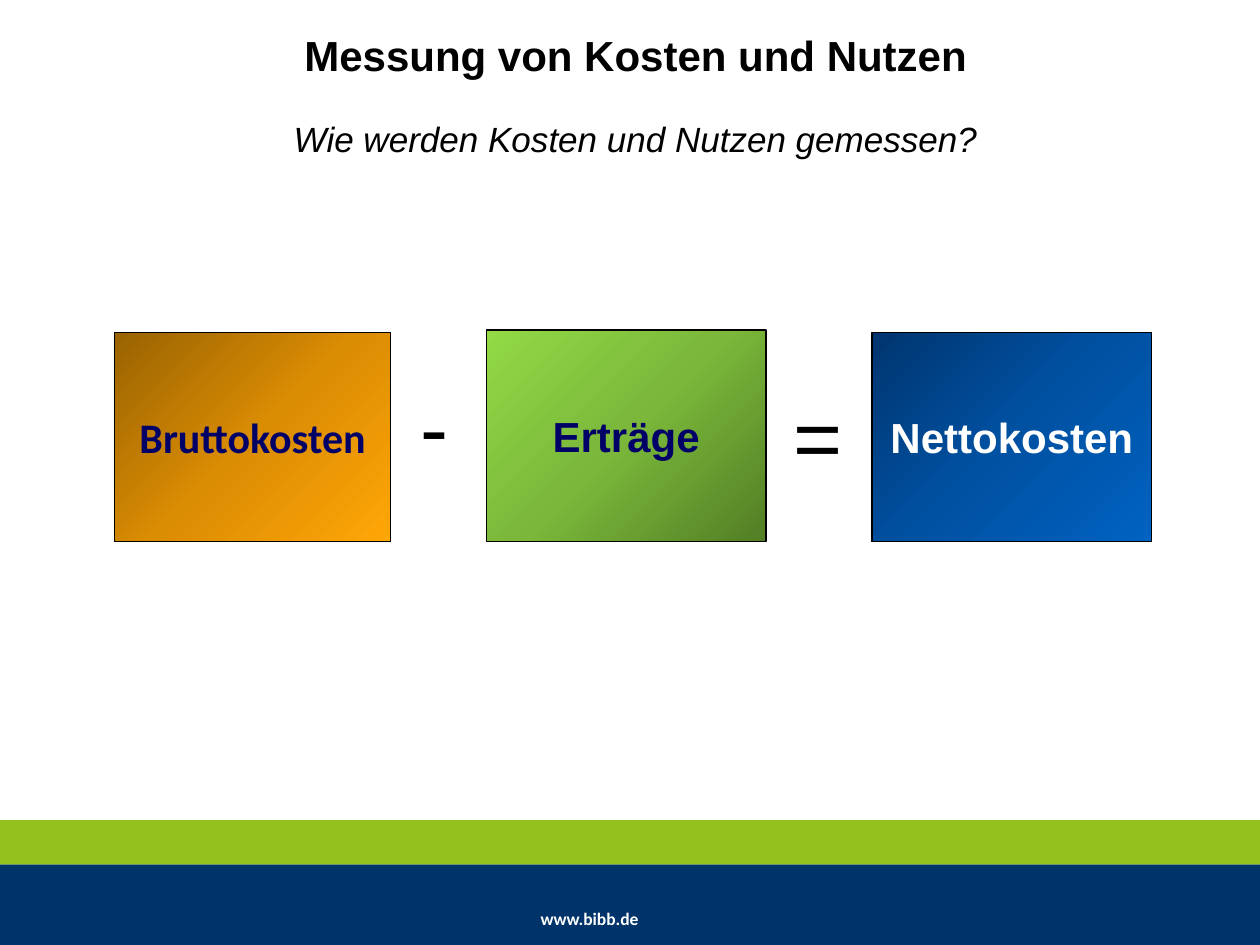
from copy import deepcopy
from dataclasses import dataclass

from pptx import Presentation
from pptx.dml.color import RGBColor
from pptx.enum import shapes, text
from pptx.util import Inches, Pt


@dataclass(frozen=True)
class Theme:
    black: str = "000000"
    white: str = "FFFFFF"
    navy: str = "000066"
    footer_blue: str = "003369"
    footer_green: str = "95C11F"
    orange: tuple = ("996302", "DA8C03", "FFA607")
    green: tuple = ("537E25", "7AB73A", "92DA46")
    blue: tuple = ("00356F", "0051A2", "0062C1")
    heading: int = 24
    subtitle: int = 20
    operator: int = 48
    footer: int = 10


THEME = Theme()


def write(shape, content, size, color=THEME.black, font="Arial", bold=False,
          italic=False, align=text.PP_ALIGN.LEFT, anchor=text.MSO_ANCHOR.TOP,
          wrap=True, margins=(0.1, 0.05), line_spacing=None):
    tf = shape.text_frame
    tf.auto_size = text.MSO_AUTO_SIZE.NONE
    tf.word_wrap = wrap
    tf.vertical_anchor = anchor
    tf.margin_left = tf.margin_right = Inches(margins[0])
    tf.margin_top = tf.margin_bottom = Inches(margins[1])
    p = tf.paragraphs[0]
    p.alignment = align
    p.space_before = Pt(0)
    p.line_spacing = line_spacing
    r = p.add_run()
    r.text = content
    r.font.name = font
    r.font.size = Pt(size)
    r.font.bold = bold
    r.font.italic = italic
    r.font.color.rgb = RGBColor.from_string(color)


def add_text(s, box, content, size, **style):
    write(s.shapes.add_textbox(*map(Inches, box)), content, size, **style)


def add_rect(s, box):
    sp = s.shapes.add_shape(shapes.MSO_SHAPE.RECTANGLE, *map(Inches, box))
    sp.shadow.inherit = False
    return sp


def add_band(s, top, height, color):
    sp = add_rect(s, (0, top, 10, height))
    sp.fill.solid()
    sp.fill.fore_color.rgb = RGBColor.from_string(color)
    sp.line.fill.background()


def fill_gradient(sp, colors, angle):
    """Spread three colours evenly along a counter-clockwise angle."""
    sp.fill.gradient()
    sp.fill.gradient_angle = angle
    first = sp.fill.gradient_stops[0]._gs
    first.addnext(deepcopy(first))
    for i, (stop, color) in enumerate(zip(sp.fill.gradient_stops, colors)):
        stop.position = i / 2
        stop.color.rgb = RGBColor.from_string(color)


def add_term(s, box, label, colors, angle=315, **style):
    sp = add_rect(s, box)
    fill_gradient(sp, colors, angle)
    sp.line.color.rgb = RGBColor.from_string(THEME.black)
    sp.line.width = Pt(0.75)
    write(sp, label, THEME.heading, bold=True, wrap=False,
          align=text.PP_ALIGN.CENTER, anchor=text.MSO_ANCHOR.MIDDLE, **style)


def add_headings(s):
    centered = dict(align=text.PP_ALIGN.CENTER, line_spacing=0.9)
    title = s.shapes.title
    title.left, title.top, title.width, title.height = map(
        Inches, (0.52, 0.23, 9.05, 0.47))
    write(title, "Messung von Kosten und Nutzen", THEME.heading,
          bold=True, **centered)
    add_text(s, (0.52, 0.92, 9.05, 0.41),
             "Wie werden Kosten und Nutzen gemessen?", THEME.subtitle,
             italic=True, **centered)


def add_footer(s):
    add_band(s, 6.86, 0.64, THEME.footer_blue)
    add_band(s, 6.51, 0.35, THEME.footer_green)
    add_text(s, (4.29, 7.21, 1.02, 0.17), "www.bibb.de", THEME.footer,
             color=THEME.white, font="Calibri", bold=True, margins=(0, 0))


def add_equation(s):
    add_term(s, (0.91, 2.64, 2.19, 1.66), "Bruttokosten", THEME.orange,
             color=THEME.navy, font="Calibri")
    add_text(s, (3.24, 2.92, 0.43, 0.91), "-", THEME.operator, wrap=False)
    add_term(s, (3.86, 2.62, 2.22, 1.68), "Erträge", THEME.green, angle=135,
             color=THEME.navy)
    add_text(s, (6.2, 3, 0.6, 0.91), "=", THEME.operator, wrap=False)
    add_term(s, (6.92, 2.64, 2.22, 1.66), "Nettokosten", THEME.blue,
             color=THEME.white)


def main():
    prs = Presentation()
    prs.slide_width, prs.slide_height = Inches(10), Inches(7.5)
    s = prs.slides.add_slide(prs.slide_layouts[5])
    add_footer(s)
    add_equation(s)
    add_headings(s)
    prs.save("out.pptx")


if __name__ == "__main__":
    main()
